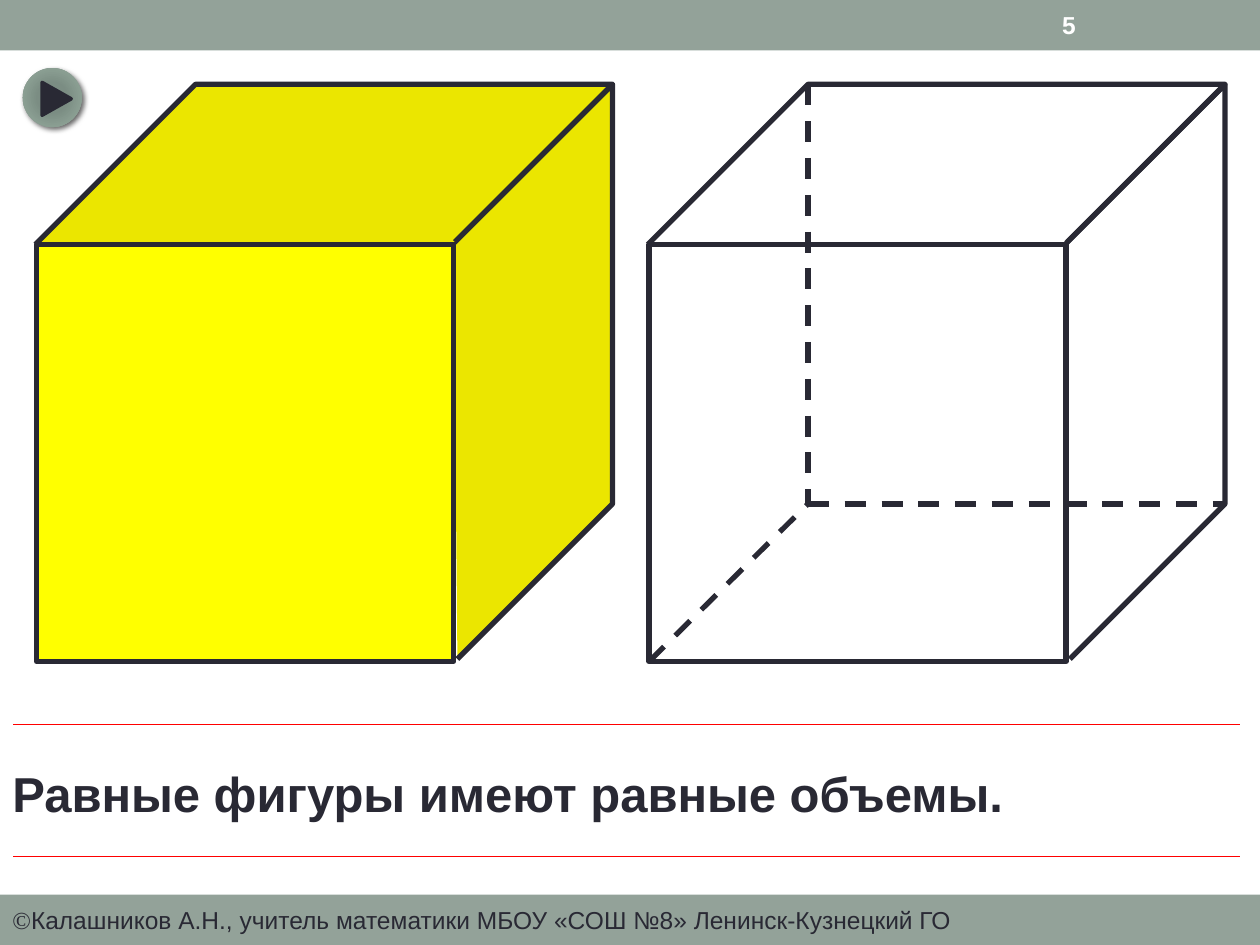
"""Build a slide comparing a solid cube with its equal wireframe cube."""
from lxml import etree
from pptx import Presentation
from pptx import util as u
from pptx.dml.color import RGBColor
from pptx.enum import dml, shapes, text
from pptx.oxml import parse_xml
from pptx.oxml.ns import qn

SAGE = RGBColor(0x93, 0xA2, 0x99)
INK = RGBColor(0x29, 0x29, 0x34)
YELLOW = RGBColor(0xFF, 0xFF, 0x00)
SHADE = RGBColor(0xEB, 0xE6, 0x00)
RED = RGBColor(0xFF, 0x00, 0x00)
WHITE = RGBColor(0xFF, 0xFF, 0xFF)

WIDTH, HEIGHT, BAND = 720, 540, 28.8
FRONT_TOP, SIDE = 139.7, 238.3
BACK_TOP, BACK_BOTTOM, DEPTH = 48.2, 288, 90.8
SOLID_LEFT, WIRE_LEFT = 20.9, 370.9

A_NS = "http://schemas.openxmlformats.org/drawingml/2006/main"
BUTTON_STOPS = ((0, "7B8E82"), (34, "7B8D83"), (70, "8A9E92"), (100, "93A299"))


def paint(sp, fill=None, line=None, weight=3):
    sp.shadow.inherit = False
    if fill is None:
        sp.fill.background()
    else:
        sp.fill.solid()
        sp.fill.fore_color.rgb = fill
    if line is None:
        sp.line.fill.background()
    else:
        sp.line.color.rgb = line
        sp.line.width = u.Pt(weight)
    return sp


def add_preset(tree, kind, x, y, w, h, **look):
    sp = tree.add_shape(kind, u.Pt(x), u.Pt(y), u.Pt(w), u.Pt(h))
    return paint(sp, **look)


def add_face(tree, points, **look):
    start, *rest = [(u.Pt(x), u.Pt(y)) for x, y in points]
    builder = tree.build_freeform(*start)
    builder.add_line_segments(rest, close=False)
    return paint(builder.convert_to_shape(), line=INK, **look)


def add_edge(tree, start, end, color=INK, weight=3, dash=None):
    ends = [u.Pt(v) for v in (*start, *end)]
    ln = tree.add_connector(shapes.MSO_CONNECTOR.STRAIGHT, *ends)
    ln.line.color.rgb = color
    ln.line.width = u.Pt(weight)
    if dash:
        ln.line.dash_style = dash
    etree.SubElement(ln.element.spPr, qn("a:effectLst"))


def write(sp, *runs, size=14, color=INK, bold=False, anchor=text.MSO_ANCHOR.TOP):
    tf = sp.text_frame
    tf.word_wrap = True
    tf.vertical_anchor = anchor
    p = tf.paragraphs[0]
    p.alignment = text.PP_ALIGN.LEFT
    for words, font in runs:
        r = p.add_run()
        r.text = words
        r.font.name = font
        r.font.size = u.Pt(size)
        r.font.bold = bold
        r.font.color.rgb = color


def add_text(tree, x, y, w, h, words, **look):
    box = tree.add_textbox(u.Pt(x), u.Pt(y), u.Pt(w), u.Pt(h))
    write(box, (words, "Arial"), **look)


def add_cube(s, left, front=None, shade=None):
    tree = s.shapes.add_group_shape().shapes
    right, bottom = left + SIDE, FRONT_TOP + SIDE
    back_left, back_right = left + DEPTH, right + DEPTH
    add_face(tree, [(right, FRONT_TOP - 0.7), (back_right, BACK_TOP),
                    (back_right, BACK_BOTTOM), (right + 2.2, bottom - 1.4)], fill=shade)
    add_face(tree, [(left - 0.7, FRONT_TOP), (back_left, BACK_TOP),
                    (back_right, BACK_TOP), (right + 0.7, FRONT_TOP - 1.4)], fill=shade)
    add_preset(tree, shapes.MSO_SHAPE.RECTANGLE, left, FRONT_TOP, SIDE, SIDE,
               fill=front, line=INK)


def add_hidden_edges(s, left):
    corner = (left + DEPTH, BACK_BOTTOM)
    dash = dml.MSO_LINE.DASH
    add_edge(s.shapes, (corner[0], BACK_TOP), corner, dash=dash)
    add_edge(s.shapes, corner, (corner[0] + SIDE, BACK_BOTTOM), dash=dash)
    add_edge(s.shapes, (left, FRONT_TOP + SIDE), corner, dash=dash)


def add_play_button(s):
    tree = s.shapes.add_group_shape().shapes
    disc = add_preset(tree, shapes.MSO_SHAPE.OVAL, 13, 38.9, 33.8, 33.8, fill=SAGE)
    stops = "".join(f'<a:gs pos="{pos * 1000}"><a:srgbClr val="{rgb}"/></a:gs>'
                    for pos, rgb in BUTTON_STOPS)
    gradient = parse_xml(
        f'<a:gradFill xmlns:a="{A_NS}"><a:gsLst>{stops}</a:gsLst><a:path path="circle">'
        '<a:fillToRect l="100000" t="100000" r="100000" b="100000"/></a:path></a:gradFill>')
    shadow = parse_xml(
        f'<a:effectLst xmlns:a="{A_NS}"><a:outerShdw blurRad="{u.Pt(3)}" dist="{u.Pt(2)}" '
        'dir="2700000" algn="tl" rotWithShape="0"><a:srgbClr val="000000">'
        '<a:alpha val="60000"/></a:srgbClr></a:outerShdw></a:effectLst>')
    props = disc.element.spPr
    props.replace(props.find(qn("a:solidFill")), gradient)
    props.replace(props.find(qn("a:effectLst")), shadow)
    arrow = add_preset(tree, shapes.MSO_SHAPE.ISOSCELES_TRIANGLE, 23, 48.2, 18.7, 16.6,
                       fill=INK, line=INK, weight=2.08)
    arrow.rotation = 90


def add_statement(s):
    tree = s.shapes.add_group_shape().shapes
    add_text(tree, 0, 432.7, WIDTH, 41, "Равные фигуры имеют равные объемы.",
             size=28, bold=True)
    for y in (414, 489.6):
        add_edge(tree, (7.6, y), (708.3, y), color=RED, weight=0.75)


def main():
    prs = Presentation()
    prs.slide_width, prs.slide_height = u.Pt(WIDTH), u.Pt(HEIGHT)
    s = prs.slides.add_slide(prs.slide_layouts[6])
    middle = text.MSO_ANCHOR.MIDDLE
    header, footer = [add_preset(s.shapes, shapes.MSO_SHAPE.RECTANGLE, 0, y, WIDTH, BAND,
                                 fill=SAGE) for y in (0, HEIGHT - BAND)]
    write(footer, ("©", "Times New Roman"),
          ("Калашников А.Н., учитель математики МБОУ «СОШ №8» Ленинск-Кузнецкий ГО", "Arial"),
          anchor=middle)
    add_hidden_edges(s, WIRE_LEFT)
    add_cube(s, SOLID_LEFT, front=YELLOW, shade=SHADE)
    add_cube(s, WIRE_LEFT)
    add_statement(s)
    add_play_button(s)
    add_text(s.shapes, 599.8, 1.4, 84.2, 25.9, "5", color=WHITE, bold=True, anchor=middle)
    prs.save("out.pptx")


if __name__ == "__main__":
    main()
